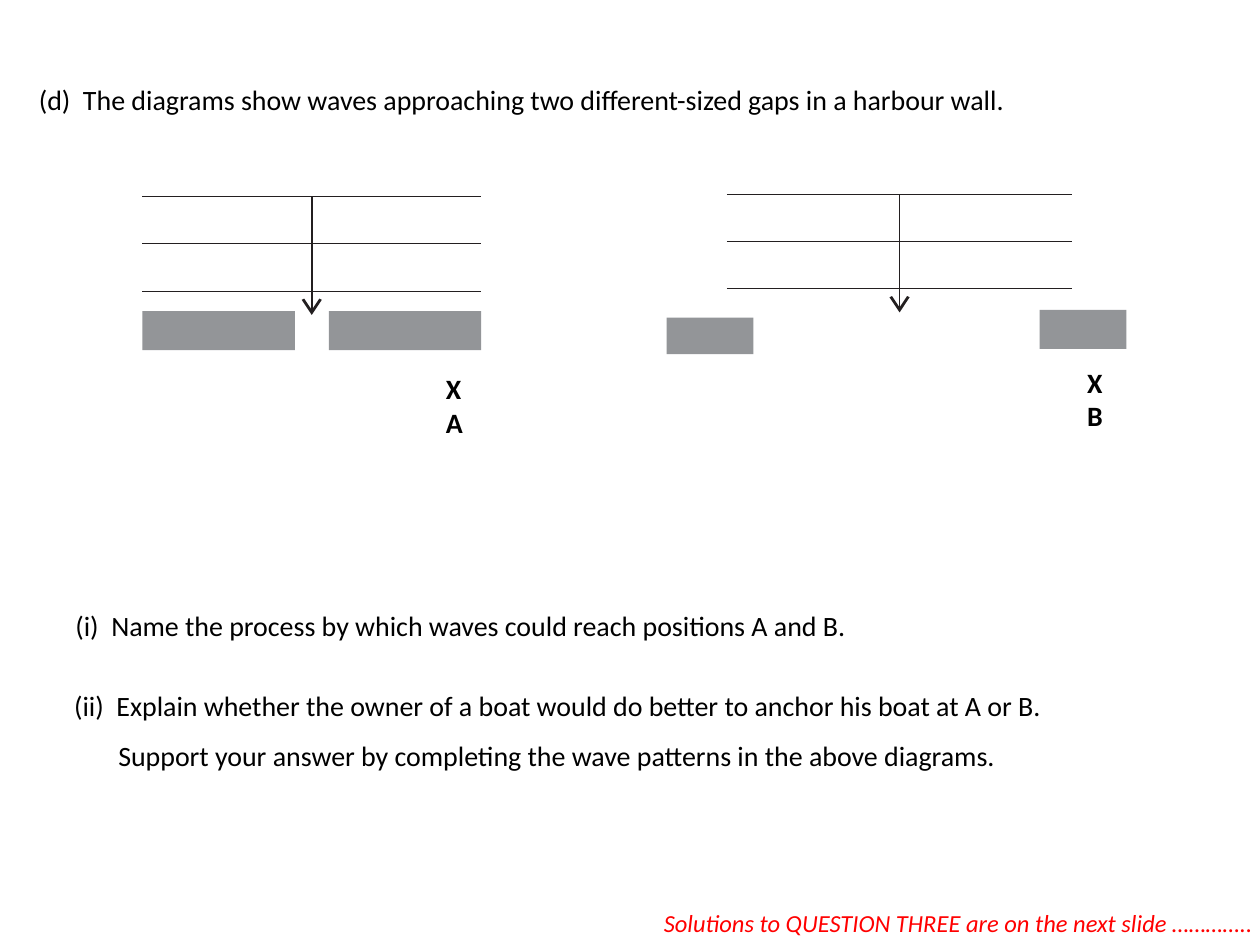
from lxml import etree
from pptx import Presentation
from pptx.dml.color import RGBColor
from pptx.enum import shapes, text
from pptx.oxml import ns
from pptx.util import Inches, Pt

COLORS = {"ink": "000000", "wave": "231F20", "wall": "939598", "note": "FF0000"}
FONT = "Calibri"
WAVE_COUNT = 3
WAVES_DEPTH = 0.75
SHAFT_LENGTH = 0.91
TIP_DEPTH = 0.94
# Outline of the open arrowhead, measured from its tip
ARROWHEAD = [(0, 0), (-0.08, -0.12), (-0.06, -0.13), (0, -0.04), (0.06, -0.13), (0.08, -0.12)]


def rgb(name):
    return RGBColor.from_string(COLORS[name])


def add_text(slide, box, lines, size=16, color="ink", bold=False, italic=False,
             indents=(), spacing=None, wrap=True):
    """Place one paragraph per line; indents gives left margins in inches."""
    frame = slide.shapes.add_textbox(*map(Inches, box)).text_frame
    frame.word_wrap = wrap
    frame.auto_size = text.MSO_AUTO_SIZE.SHAPE_TO_FIT_TEXT
    frame.text = "\n".join(lines)
    for paragraph in frame.paragraphs:
        font = paragraph.font
        font.name, font.size, font.bold, font.italic = FONT, Pt(size), bold, italic
        font.color.rgb = rgb(color)
        paragraph.line_spacing = spacing
    for paragraph, indent in zip(frame.paragraphs, indents):
        properties = paragraph._p.get_or_add_pPr()
        properties.set("marL", str(Inches(indent)))
        properties.set("indent", "0")


def add_line(slide, x1, y1, x2, y2, weight):
    line = slide.shapes.add_connector(shapes.MSO_CONNECTOR.STRAIGHT,
                                      *map(Inches, (x1, y1, x2, y2)))
    line.line.color.rgb = rgb("wave")
    line.line.width = Pt(weight)
    etree.SubElement(line._element.spPr, ns.qn("a:effectLst"))


def fill_plain(shape, color):
    shape.shadow.inherit = False
    shape.fill.solid()
    shape.fill.fore_color.rgb = rgb(color)
    shape.line.fill.background()


def add_direction_arrow(slide, x, top):
    add_line(slide, x, top, x, top + SHAFT_LENGTH, 1)
    points = [(Inches(x + dx), Inches(top + TIP_DEPTH + dy)) for dx, dy in ARROWHEAD]
    outline = slide.shapes.build_freeform(*points[0])
    outline.add_line_segments(points[1:])
    fill_plain(outline.convert_to_shape(), "wave")


def add_harbour(slide, left, top, width, walls, position, position_offset):
    """Draw waves, direction arrow, walls and a marked position from the top-left wave end."""
    for i in range(WAVE_COUNT):
        y = top + i * WAVES_DEPTH / (WAVE_COUNT - 1)
        add_line(slide, left, y, left + width, y, 0.5)
    for dx, dy, wall_width, wall_height in walls:
        wall = slide.shapes.add_shape(
            shapes.MSO_SHAPE.RECTANGLE,
            *map(Inches, (left + dx, top + dy, wall_width, wall_height)))
        fill_plain(wall, "wall")
    add_direction_arrow(slide, left + width / 2, top)
    dx, dy = position_offset
    add_text(slide, (left + dx, top + dy, 0.34, 0.64), ["X", position], bold=True, wrap=False)


def add_questions(slide):
    add_text(slide, (0.21, 0.61, 9.42, 0.37),
             ["(d)  The diagrams show waves approaching two different-sized gaps in a harbour wall."])
    add_text(slide, (0, 4.78, 6.94, 0.37),
             ["(i)  Name the process by which waves could reach positions A and B."], indents=[0.5])
    add_text(slide, (-0.01, 5.28, 8.85, 0.91),
             ["(ii)  Explain whether the owner of a boat would do better to anchor his boat at A or B.",
              "Support your answer by completing the wave patterns in the above diagrams."],
             indents=[0.5, 0.85], spacing=1.5)


def main():
    prs = Presentation()
    prs.slide_width, prs.slide_height = Inches(10), Inches(7.5)
    slide = prs.slides.add_slide(prs.slide_layouts[6])
    add_questions(slide)
    add_harbour(slide, 1.13, 1.56, 2.69,
                [(0, 0.91, 1.21, 0.31), (1.48, 0.91, 1.21, 0.31)], "A", (2.31, 1.34))
    add_harbour(slide, 5.77, 1.54, 2.74,
                [(-0.48, 0.98, 0.69, 0.29), (2.48, 0.92, 0.69, 0.31)], "B", (2.76, 1.31))
    add_text(slide, (5.17, 7.16, 5.04, 0.34),
             ["Solutions to QUESTION THREE are on the next slide ………….."],
             size=14, color="note", italic=True, wrap=False)
    prs.save("out.pptx")


if __name__ == "__main__":
    main()
